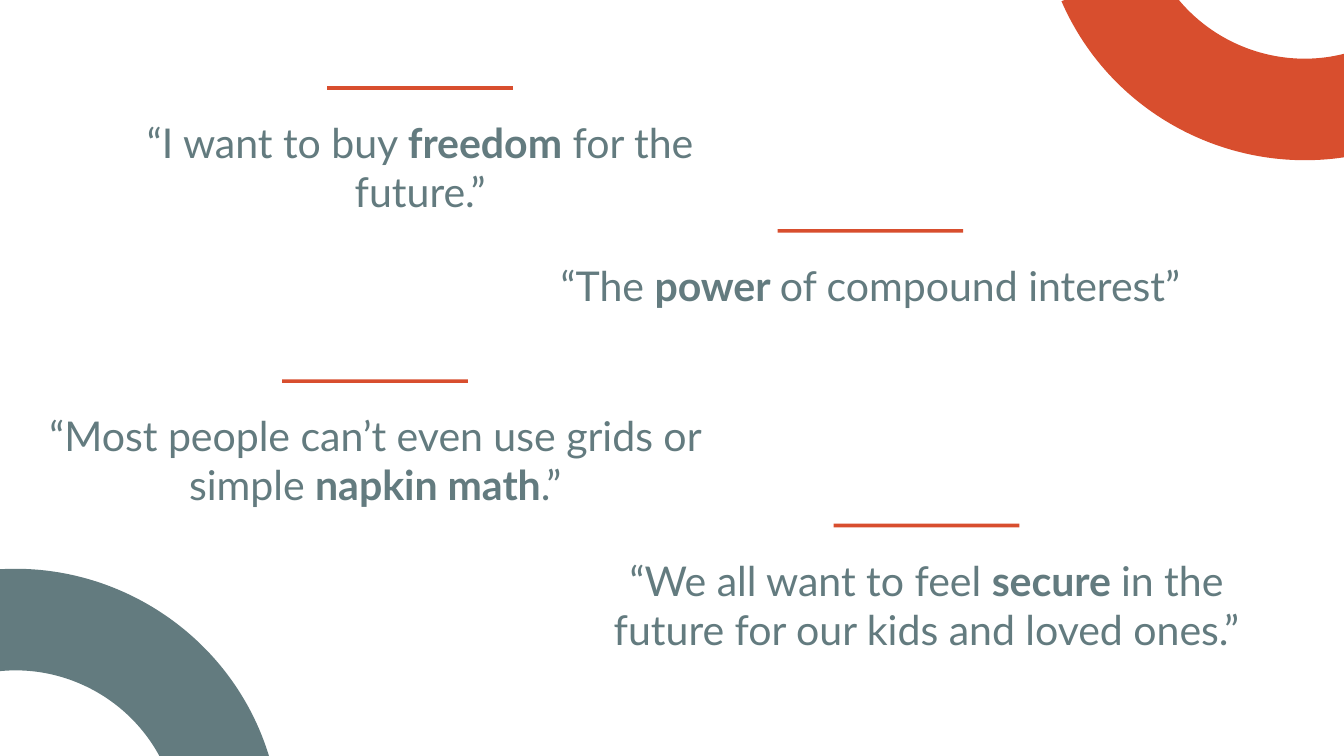
from dataclasses import dataclass

from lxml import etree
from pptx import Presentation
from pptx.dml.color import RGBColor
from pptx.enum.shapes import MSO_SHAPE
from pptx.enum.text import MSO_ANCHOR, MSO_AUTO_SIZE, PP_ALIGN
from pptx.oxml.ns import qn
from pptx.util import Cm, Pt

RECTANGLE = MSO_SHAPE.RECTANGLE
TOP = MSO_ANCHOR.TOP
CENTER = PP_ALIGN.CENTER
NO_AUTOFIT = MSO_AUTO_SIZE.NONE
COMPARISON_LAYOUT = 4  # the layout with four body placeholders


@dataclass(frozen=True)
class Theme:
    accent: RGBColor = RGBColor(0xD8, 0x4E, 0x2E)
    slate: RGBColor = RGBColor(0x63, 0x7B, 0x7F)
    font: str = "Lato"
    quote_size: Pt = Pt(22)


THEME = Theme()

# Geometry in centimetres
QUOTE_WIDTH, QUOTE_HEIGHT = 13.16, 1.75
RULE_WIDTH, RULE_HEIGHT = 3.51, 0.07
RULE_RISE = 0.34
RING_OUTER, RING_INNER = 5.0, 3.08
ARC_HANDLE = 0.55  # length of a quarter circle's Bézier handle per radius

FRAME_FORMAT = {
    "margin_left": Cm(0.25),
    "margin_right": Cm(0.25),
    "margin_top": Cm(0.25),
    "margin_bottom": Cm(0.25),
    "word_wrap": True,
    "auto_size": NO_AUTOFIT,
    "vertical_anchor": TOP,
}
PARAGRAPH_FORMAT = {
    "alignment": CENTER,
    "line_spacing": 1.0,
    "space_before": Pt(0),
    "space_after": Pt(16),
}
FONT_FORMAT = {"name": THEME.font, "size": THEME.quote_size}

# Left, top, then the text before, in and after the bold part
QUOTES = [
    (1.36, 1.97, "“I want to buy ", "freedom", " for the future.”"),
    (9.87, 4.67, "“The ", "power ", "of compound interest”"),
    (0.51, 7.51, "“Most people can’t even use grids or simple ",
     "napkin math", ".”"),
    (10.93, 10.24, "“We all want to feel ", "secure ",
     "in the future for our kids and loved ones.”"),
]

# Left, top, rotation, colour
RINGS = [
    (20.85, -1.18, 156.5, THEME.accent),
    (-0.43, 10.19, 345, THEME.slate),
]


def apply_format(target, values):
    for name, value in values.items():
        setattr(target, name, value)


def paint(shape, color):
    shape.fill.solid()
    shape.fill.fore_color.rgb = color
    shape.line.fill.background()
    shape.shadow.inherit = False


def bend(line, points):
    """Turn a straight segment of an outline into a cubic curve."""
    curve = etree.Element(qn("a:cubicBezTo"))
    for x, y in points:
        etree.SubElement(curve, qn("a:pt"), x=str(Cm(x)), y=str(Cm(y)))
    line.getparent().replace(line, curve)


def add_quarter_ring(page, left, top, rotation, color):
    # The circle's centre is the lower left corner of the unrotated box
    outer, inner = RING_OUTER, RING_INNER
    gap = outer - inner
    builder = page.shapes.build_freeform(0, 0)
    corners = [(outer, outer), (inner, outer), (0, gap)]
    builder.add_line_segments([(Cm(x), Cm(y)) for x, y in corners], close=True)
    ring = builder.convert_to_shape(Cm(left), Cm(top))

    outer_line, _, inner_line = list(ring.element.iter(qn("a:lnTo")))
    bend(outer_line, [(outer * ARC_HANDLE, 0),
                      (outer, outer * (1 - ARC_HANDLE)), (outer, outer)])
    bend(inner_line, [(inner, outer - inner * ARC_HANDLE),
                      (inner * ARC_HANDLE, gap), (0, gap)])
    ring.rotation = rotation
    paint(ring, color)


def add_rule(page, left, top):
    rule = page.shapes.add_shape(
        RECTANGLE, Cm(left), Cm(top), Cm(RULE_WIDTH), Cm(RULE_HEIGHT))
    paint(rule, THEME.accent)


def remove_bullet(paragraph):
    properties = paragraph._p.get_or_add_pPr()
    properties.set("marL", "0")
    properties.set("indent", "0")
    etree.SubElement(properties, qn("a:buNone"))


def fill_quote(box, left, top, spans):
    apply_format(box, {
        "left": Cm(left), "top": Cm(top),
        "width": Cm(QUOTE_WIDTH), "height": Cm(QUOTE_HEIGHT),
    })
    apply_format(box.text_frame, FRAME_FORMAT)
    paragraph = box.text_frame.paragraphs[0]
    apply_format(paragraph, PARAGRAPH_FORMAT)
    remove_bullet(paragraph)
    for index, text in enumerate(spans):
        span = paragraph.add_run()
        span.text = text
        apply_format(span.font, FONT_FORMAT)
        span.font.bold = index == 1
        span.font.color.rgb = THEME.slate
    # Stack the quote above the rings and its own rule
    box.element.getparent().append(box.element)


def main():
    deck = Presentation()
    deck.slide_width, deck.slide_height = Cm(25.4), Cm(14.29)
    page = deck.slides.add_slide(deck.slide_layouts[COMPARISON_LAYOUT])

    # This page has no title
    title = page.shapes.title.element
    title.getparent().remove(title)
    boxes = list(page.placeholders)

    # Corner rings
    for ring in RINGS:
        add_quarter_ring(page, *ring)

    # Quotes, each with a short rule centred above it
    for box, (left, top, *spans) in zip(boxes, QUOTES):
        add_rule(page, left + (QUOTE_WIDTH - RULE_WIDTH) / 2, top - RULE_RISE)
        fill_quote(box, left, top, spans)

    deck.save("out.pptx")


if __name__ == "__main__":
    main()
